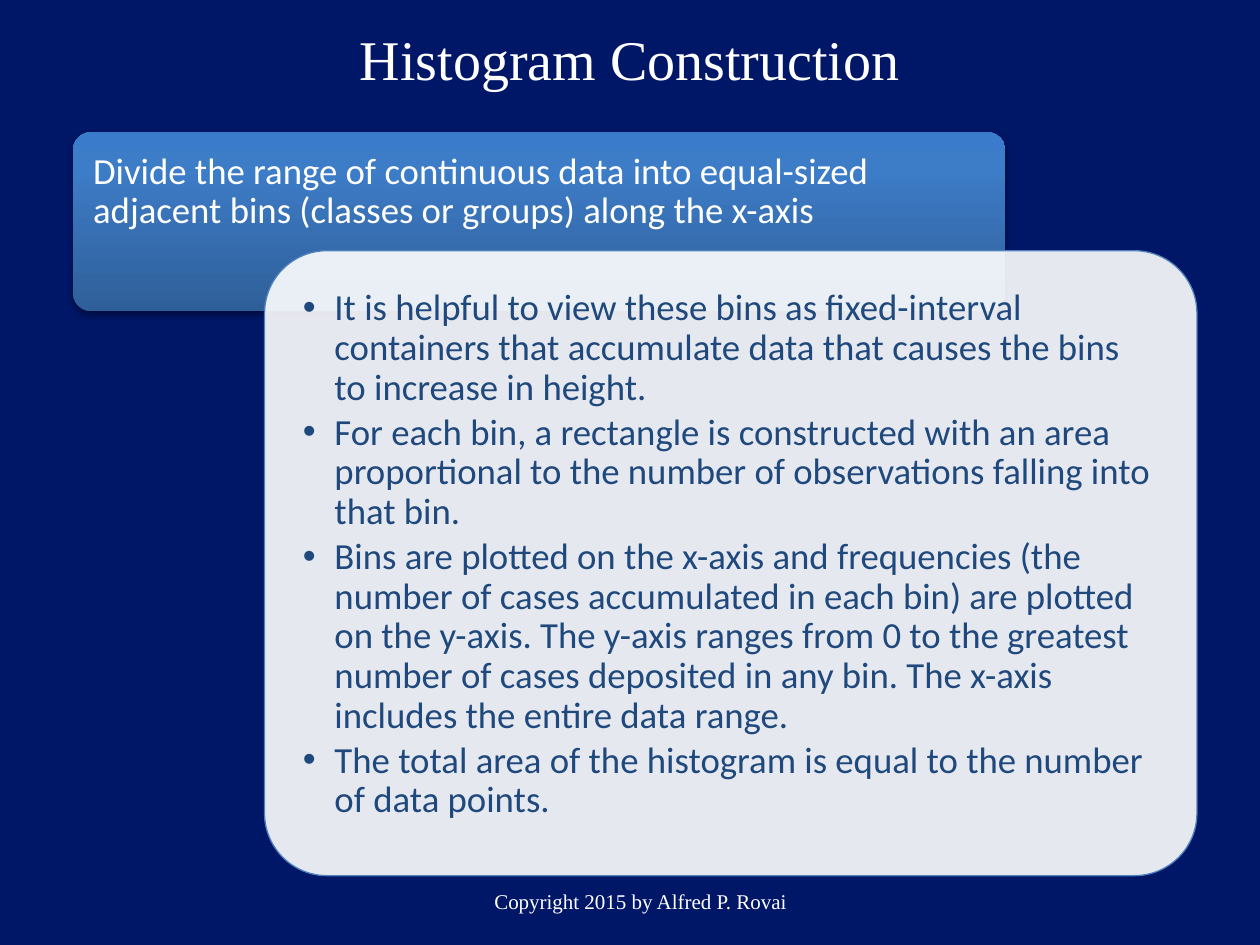
from typing import NamedTuple, Optional

from lxml.etree import SubElement
from pptx import Presentation
from pptx.dml.color import RGBColor
from pptx.enum.shapes import MSO_SHAPE as Preset
from pptx.enum.text import MSO_ANCHOR as Anchor, MSO_AUTO_SIZE as AutoSize, PP_ALIGN as Align
from pptx.oxml.ns import qn
from pptx.util import Inches, Pt

NAVY = RGBColor(0x00, 0x16, 0x67)
WHITE = RGBColor(0xFF, 0xFF, 0xFF)
DEEP_BLUE = RGBColor(0x1F, 0x49, 0x7D)
EDGE_BLUE = RGBColor(0x4F, 0x81, 0xBD)
BLACK = RGBColor(0x00, 0x00, 0x00)
CARD_GRADIENT = [
    (0, RGBColor(0x2F, 0x5F, 0x99)),
    (80, RGBColor(0x3D, 0x7C, 0xC7)),
    (100, RGBColor(0x3A, 0x7C, 0xCB)),
]

SLIDE_WIDTH, SLIDE_HEIGHT = Inches(10), Inches(7.5)
SERIF, SANS = "Times New Roman", "Calibri"

STEP = "Divide the range of continuous data into equal-sized adjacent bins (classes or groups) along the x-axis"
DETAILS = [
    "It is helpful to view these bins as fixed-interval containers that accumulate data "
    "that causes the bins to increase in height.",
    "For each bin, a rectangle is constructed with an area proportional to the number of "
    "observations falling into that bin.",
    "Bins are plotted on the x-axis and frequencies (the number of cases accumulated in each bin) "
    "are plotted on the y-axis. The y-axis ranges from 0 to the greatest number of cases deposited "
    "in any bin. The x-axis includes the entire data range.",
    "The total area of the histogram is equal to the number of data points.",
]


class Box(NamedTuple):
    """A rectangle in inches on the 10 by 7.5 slide."""
    left: float
    top: float
    width: float
    height: float

    def emu(self) -> list:
        return [Inches(length) for length in self]

    def inset(self, margin: float) -> "Box":
        return Box(self.left + margin, self.top + margin,
                   self.width - 2 * margin, self.height - 2 * margin)


TITLE = Box(0.5, 0, 9, 0.92)
CARD = Box(0.58, 1.05, 7.4, 1.42)
PANEL = Box(2.1, 1.99, 7.4, 4.96)
FOOTER = Box(1.75, 6.95, 6.67, 0.4)


def write(holder, box: Box, lines: list, *, font: str, size: float, color: RGBColor,
          align=Align.LEFT, anchor=Anchor.TOP, margins=(0.1, 0.05, 0.1, 0.05),
          line_spacing: float = 1.0, space_after: float = 0,
          bullet: Optional[str] = None) -> None:
    """Place a text holder and fill it with formatted paragraphs."""
    holder.left, holder.top, holder.width, holder.height = box.emu()
    frame = holder.text_frame
    frame.word_wrap, frame.auto_size, frame.vertical_anchor = True, AutoSize.NONE, anchor
    (frame.margin_left, frame.margin_top,
     frame.margin_right, frame.margin_bottom) = [Inches(m) for m in margins]
    for index, line in enumerate(lines):
        paragraph = frame.add_paragraph() if index else frame.paragraphs[0]
        paragraph.alignment, paragraph.line_spacing = align, line_spacing
        paragraph.space_before, paragraph.space_after = Pt(0), Pt(space_after)
        if bullet:
            paragraph.level = 1
            properties = paragraph._p.get_or_add_pPr()
            properties.set("marL", str(Inches(0.25)))
            properties.set("indent", str(-Inches(0.25)))
            SubElement(properties, qn("a:buChar"), char=bullet)
        run = paragraph.add_run()
        run.text = line
        run.font.name, run.font.size, run.font.color.rgb = font, Pt(size), color


def add_rounded(slide, box: Box):
    shape = slide.shapes.add_shape(Preset.ROUNDED_RECTANGLE, *box.emu())
    shape.adjustments[0] = 0.1
    shape.shadow.inherit = False
    return shape


def add_color(parent, color: RGBColor, alpha: Optional[int] = None) -> None:
    node = SubElement(parent, qn("a:srgbClr"), val=str(color))
    if alpha is not None:
        SubElement(node, qn("a:alpha"), val=str(alpha * 1000))


def add_card(slide) -> None:
    """Gradient card with a soft shadow below it."""
    card = add_rounded(slide, CARD)
    card.line.fill.background()
    card.fill.gradient()
    properties = card.element.spPr
    stops = properties.find(".//" + qn("a:gsLst"))
    stops.clear()
    for position, color in CARD_GRADIENT:
        add_color(SubElement(stops, qn("a:gs"), pos=str(position * 1000)), color)
    properties.find(".//" + qn("a:lin")).set("ang", str(270 * 60000))
    shadow = SubElement(properties.find(qn("a:effectLst")), qn("a:outerShdw"),
                        blurRad=str(Pt(3.1)), dist=str(Pt(1.8)),
                        dir=str(90 * 60000), rotWithShape="0")
    add_color(shadow, BLACK, alpha=35)


def add_panel(slide):
    """Translucent white panel that overlaps the card."""
    panel = add_rounded(slide, PANEL)
    panel.fill.solid()
    panel.fill.fore_color.rgb = WHITE
    white = panel.element.spPr.find(qn("a:solidFill")).find(qn("a:srgbClr"))
    SubElement(white, qn("a:alpha"), val="90000")
    panel.line.color.rgb = EDGE_BLUE
    panel.line.width = Pt(0.75)
    return panel


def main() -> None:
    deck = Presentation()
    deck.slide_width, deck.slide_height = SLIDE_WIDTH, SLIDE_HEIGHT
    slide = deck.slides.add_slide(deck.slide_layouts[1])
    slide.background.fill.solid()
    slide.background.fill.fore_color.rgb = NAVY
    title, details = slide.placeholders

    # Title
    write(title, TITLE, ["Histogram Construction"], font=SERIF, size=32, color=WHITE,
          align=Align.CENTER, anchor=Anchor.MIDDLE)

    # Step card
    add_card(slide)
    write(slide.shapes.add_textbox(0, 0, 0, 0), CARD._replace(height=0.95), [STEP],
          font=SANS, size=21, color=WHITE, margins=(0.16, 0.16, 0.16, 0.09), line_spacing=0.9)

    # Details panel, with its list brought in front of it
    panel = add_panel(slide)
    panel.element.addnext(details.element)
    write(details, PANEL.inset(0.145), DETAILS, font=SANS, size=21, color=DEEP_BLUE,
          margins=(0.16,) * 4, line_spacing=0.9, space_after=3, bullet="•")

    # Footer
    write(slide.shapes.add_textbox(0, 0, 0, 0), FOOTER, ["Copyright 2015 by Alfred P. Rovai"],
          font=SERIF, size=12, color=WHITE, align=Align.CENTER, anchor=Anchor.MIDDLE)

    deck.save("out.pptx")


if __name__ == "__main__":
    main()
